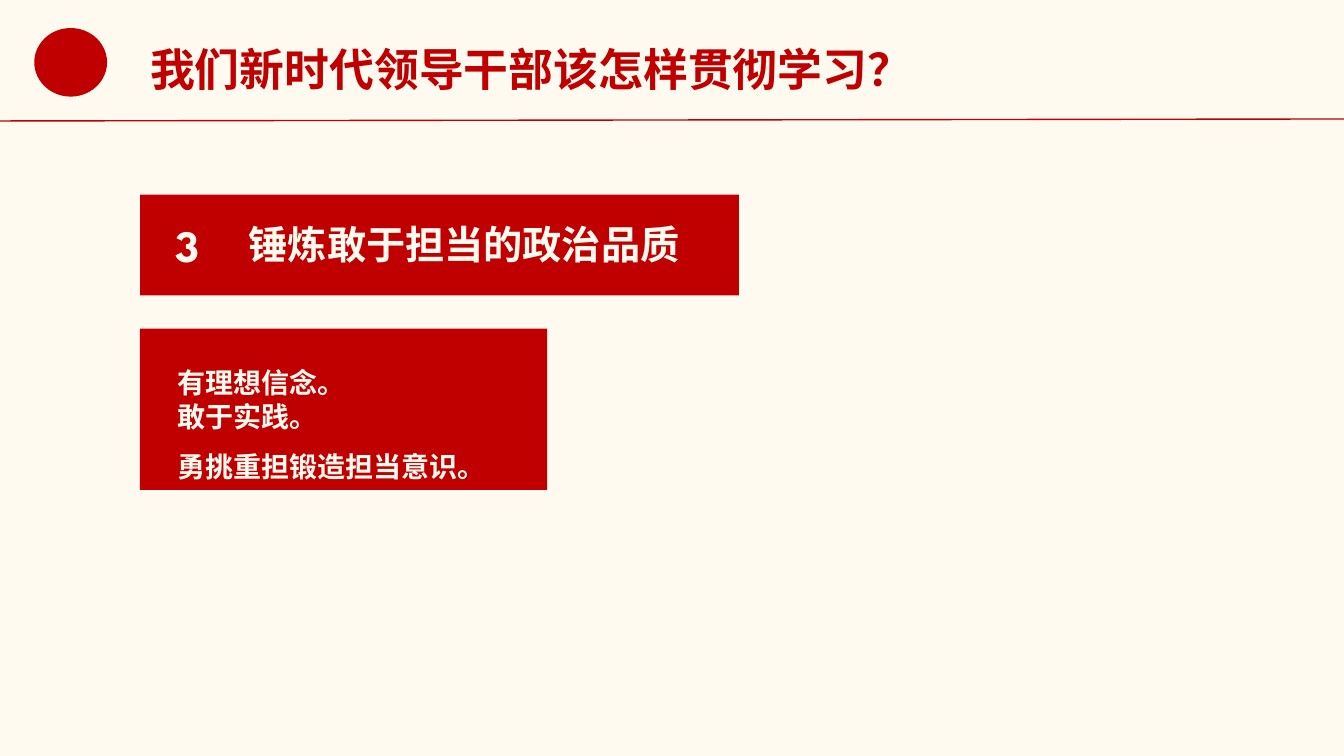
from lxml.etree import SubElement
from pptx import Presentation
from pptx.dml.color import RGBColor
from pptx.enum.shapes import MSO_CONNECTOR as CONN, MSO_SHAPE as SHAPE
from pptx.enum.text import MSO_ANCHOR as ANCHOR, MSO_AUTO_SIZE as FIT, PP_ALIGN as ALIGN
from pptx.oxml.ns import qn
from pptx.util import Inches, Pt

RED = RGBColor(0xC0, 0x00, 0x00)
CREAM = RGBColor(0xFF, 0xFA, 0xF0)
SANS = "Noto Sans CJK SC"
SPARTAN = "League Spartan"
COLS, ROWS = 96, 54


class Deck:
    """Holds the style and the current slide, placed on a 96 by 54 grid."""

    def __init__(self):
        self.prs = Presentation()
        self.prs.slide_width, self.prs.slide_height = Inches(13.33), Inches(7.5)
        self.s = self.prs.slides.add_slide(self.prs.slide_layouts[1])
        self.s.background.fill.solid()
        self.s.background.fill.fore_color.rgb = CREAM

    def grid(self, *cells):
        units = self.prs.slide_width / COLS, self.prs.slide_height / ROWS
        return [round(cell * units[i % 2]) for i, cell in enumerate(cells)]

    def block(self, kind, *cells):
        sp = self.s.shapes.add_shape(kind, *self.grid(*cells))
        sp.shadow.inherit = False
        sp.fill.solid()
        sp.fill.fore_color.rgb = RED
        sp.line.fill.background()
        return sp

    def rule(self, *cells):
        line = self.s.shapes.add_connector(CONN.STRAIGHT, *self.grid(*cells))
        line.line.color.rgb = RED
        line.line.width = Pt(1)
        SubElement(line.element.spPr, qn("a:effectLst"))

    def set_text(self, sp, text, size, color, font=SANS, wrap=False):
        tf = sp.text_frame
        tf.text = text
        tf.word_wrap = wrap
        tf.auto_size = FIT.NONE
        tf.vertical_anchor = ANCHOR.TOP
        for p in tf.paragraphs:
            p.alignment = ALIGN.LEFT
            for r in p.runs:
                r.font.size, r.font.bold, r.font.name = Pt(size), True, font
                r.font.color.rgb = color
                SubElement(r.font._element, qn("a:ea")).set("typeface", font)

    def place(self, sp, *cells):
        sp.left, sp.top, sp.width, sp.height = self.grid(*cells)

    def title(self, text, *cells):
        sp = self.s.shapes.title
        self.place(sp, *cells)
        self.set_text(sp, text, 32, RED)

    def label(self, text, size, font, *cells):
        sp = self.s.shapes.add_textbox(*self.grid(*cells))
        self.set_text(sp, text, size, CREAM, font)

    def body(self, lines, spacings, *cells):
        sp = self.s.placeholders[1]
        self.place(sp, *cells)
        self.set_text(sp, "\n".join(lines), 20, CREAM, wrap=True)
        for p, spacing in zip(sp.text_frame.paragraphs, spacings):
            p.line_spacing = spacing
            p.space_before = Pt(0)
            pPr = p._p.get_or_add_pPr()
            pPr.set("marL", "0")
            pPr.set("indent", "0")
            SubElement(pPr, qn("a:buNone"))
        sp.element.getparent().append(sp.element)


def main():
    deck = Deck()
    deck.block(SHAPE.OVAL, 2.45, 2, 5.2, 4.9)
    deck.rule(0, 8.64, COLS, 8.5)
    deck.title("我们新时代领导干部该怎样贯彻学习？", 10, 2.6, 55.87, 4.6)
    deck.block(SHAPE.RECTANGLE, 10, 23.47, 29.09, 11.52)
    deck.body(["有理想信念。", "敢于实践。", "勇挑重担锻造担当意识。"], [1.5, 1.0, 1.5],
              11.95, 24.55, 60.77, 10.44)
    banner = deck.block(SHAPE.ROUNDED_RECTANGLE, 10, 13.9, 42.77, 7.2)
    banner.adjustments[0] = 0
    deck.label("锤炼敢于担当的政治品质", 28, SANS, 17.06, 15.41, 32.54, 4.1)
    deck.label("3", 32, SPARTAN, 11.81, 15.19, 3.74, 4.6)
    deck.prs.save("out.pptx")


if __name__ == "__main__":
    main()
